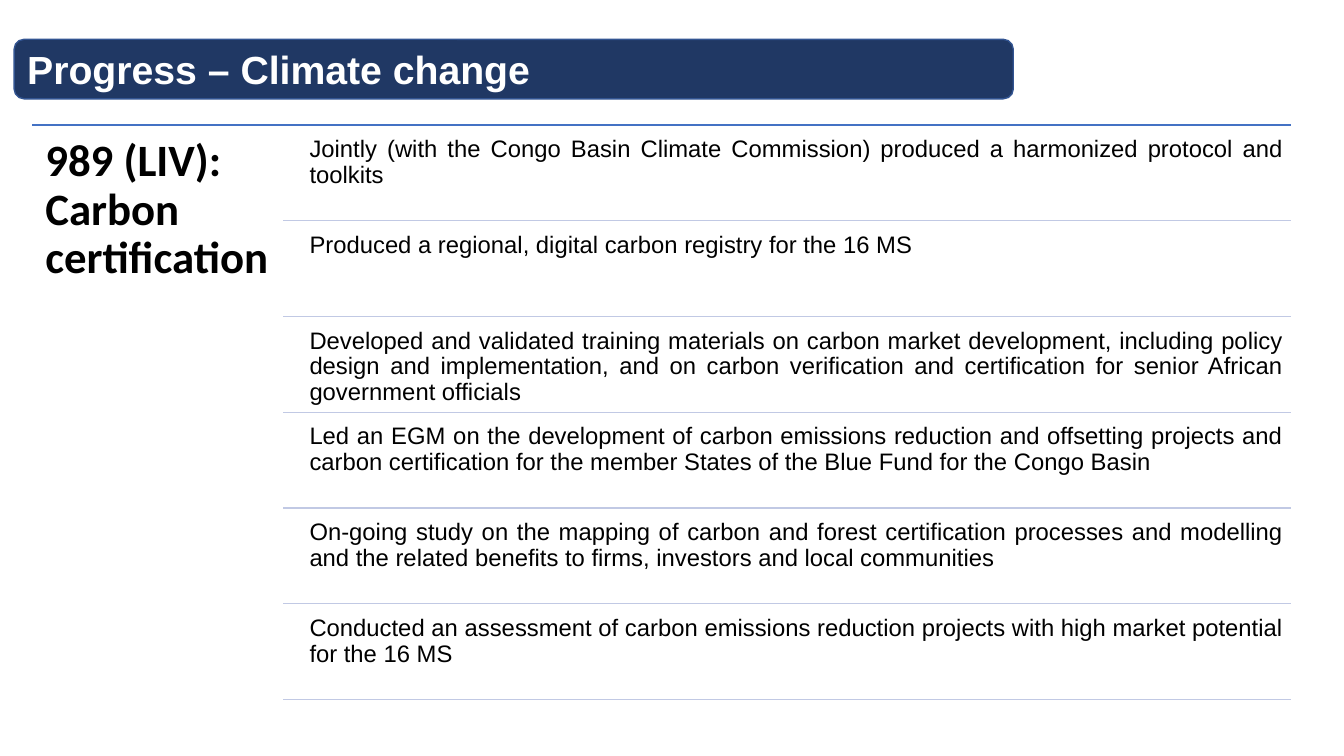
from pptx import Presentation
from pptx.dml.color import RGBColor
from pptx.enum.shapes import MSO_CONNECTOR, MSO_SHAPE
from pptx.enum.text import MSO_ANCHOR, MSO_AUTO_SIZE, PP_ALIGN
from pptx.oxml.ns import qn
from pptx.util import Inches, Pt

COLORS = {
    "banner": "203864",
    "banner_edge": "325491",
    "top_rule": "4472C4",
    "row_rule": "C1C9E4",
    "text": "000000",
    "title": "FFFFFF",
}

ACHIEVEMENTS = [
    "Jointly (with the Congo Basin Climate Commission) produced a harmonized protocol and toolkits",
    "Produced a regional, digital carbon registry for the 16 MS",
    "Developed and validated training materials on carbon market development, including policy design "
    "and implementation, and on carbon verification and certification for senior African government officials",
    "Led an EGM on the development of carbon emissions reduction and offsetting projects and carbon "
    "certification for the member States of the Blue Fund for the Congo Basin",
    "On-going study on the mapping of carbon and forest certification processes and modelling and the "
    "related benefits to firms, investors and local communities",
    "Conducted an assessment of carbon emissions reduction projects with high market potential for the 16 MS",
]

TOP = 1.24
RIGHT = 12.8
ROW_PITCH = 0.95
ROW_GAP = 0.05


class ProgressSlide:
    """Draws the elements of a progress slide in one shared style."""

    def __init__(self, slide):
        self.slide = slide

    def color(self, name):
        return RGBColor.from_string(COLORS[name])

    def style(self, paragraph, size, color="text", font="Arial", bold=False):
        paragraph.font.name = font
        paragraph.font.size = Pt(size)
        paragraph.font.bold = bold
        paragraph.font.color.rgb = self.color(color)

    def banner(self, left, top, width, height, wording):
        bar = self.slide.shapes.add_shape(
            MSO_SHAPE.ROUNDED_RECTANGLE, Inches(left), Inches(top), Inches(width), Inches(height))
        bar.shadow.inherit = False
        bar.fill.solid()
        bar.fill.fore_color.rgb = self.color("banner")
        bar.line.color.rgb = self.color("banner_edge")
        bar.line.width = Pt(1)

        title = self.slide.shapes.title
        bar._element.addnext(title._element)
        title.left, title.top = Inches(left + 0.03), Inches(top)
        title.width, title.height = Inches(width - 0.06), Inches(height)
        frame = title.text_frame
        frame.text = wording
        frame.auto_size = MSO_AUTO_SIZE.NONE
        frame.vertical_anchor = MSO_ANCHOR.MIDDLE
        heading = frame.paragraphs[0]
        heading.alignment = PP_ALIGN.LEFT
        self.style(heading, 28, "title", bold=True)

    def rule(self, left, y, color):
        line = self.slide.shapes.add_connector(
            MSO_CONNECTOR.STRAIGHT, Inches(left), Inches(y), Inches(RIGHT), Inches(y))
        line.line.color.rgb = self.color(color)
        line.line.width = Pt(1)
        properties = line._element.spPr
        properties.append(properties.makeelement(qn("a:effectLst"), {}))

    def text(self, left, top, width, height, wording, inset, size, align=PP_ALIGN.LEFT, **look):
        box = self.slide.shapes.add_textbox(Inches(left), Inches(top), Inches(width), Inches(height))
        frame = box.text_frame
        frame.word_wrap = True
        frame.margin_left = frame.margin_right = Inches(inset)
        frame.margin_top = frame.margin_bottom = Inches(inset)
        frame.text = wording
        paragraph = frame.paragraphs[0]
        paragraph.alignment = align
        paragraph.line_spacing = 0.9
        self.style(paragraph, size, **look)


def main():
    deck = Presentation()
    deck.slide_width, deck.slide_height = Inches(13.33), Inches(7.5)
    page = ProgressSlide(deck.slides.add_slide(deck.slide_layouts[5]))

    page.banner(0.14, 0.39, 9.91, 0.59, "Progress – Climate change")
    page.rule(0.32, TOP, "top_rule")
    page.text(0.32, TOP, 2.5, 5.75, "989 (LIV): Carbon certification", 0.13, 32, font="Calibri", bold=True)
    for row, achievement in enumerate(ACHIEVEMENTS):
        row_top = TOP + row * ROW_PITCH
        page.text(3, row_top + ROW_GAP, 9.8, 0.91, achievement, 0.07, 17, PP_ALIGN.JUSTIFY)
        page.rule(2.81, row_top + ROW_PITCH, "row_rule")

    deck.save("out.pptx")


if __name__ == "__main__":
    main()
